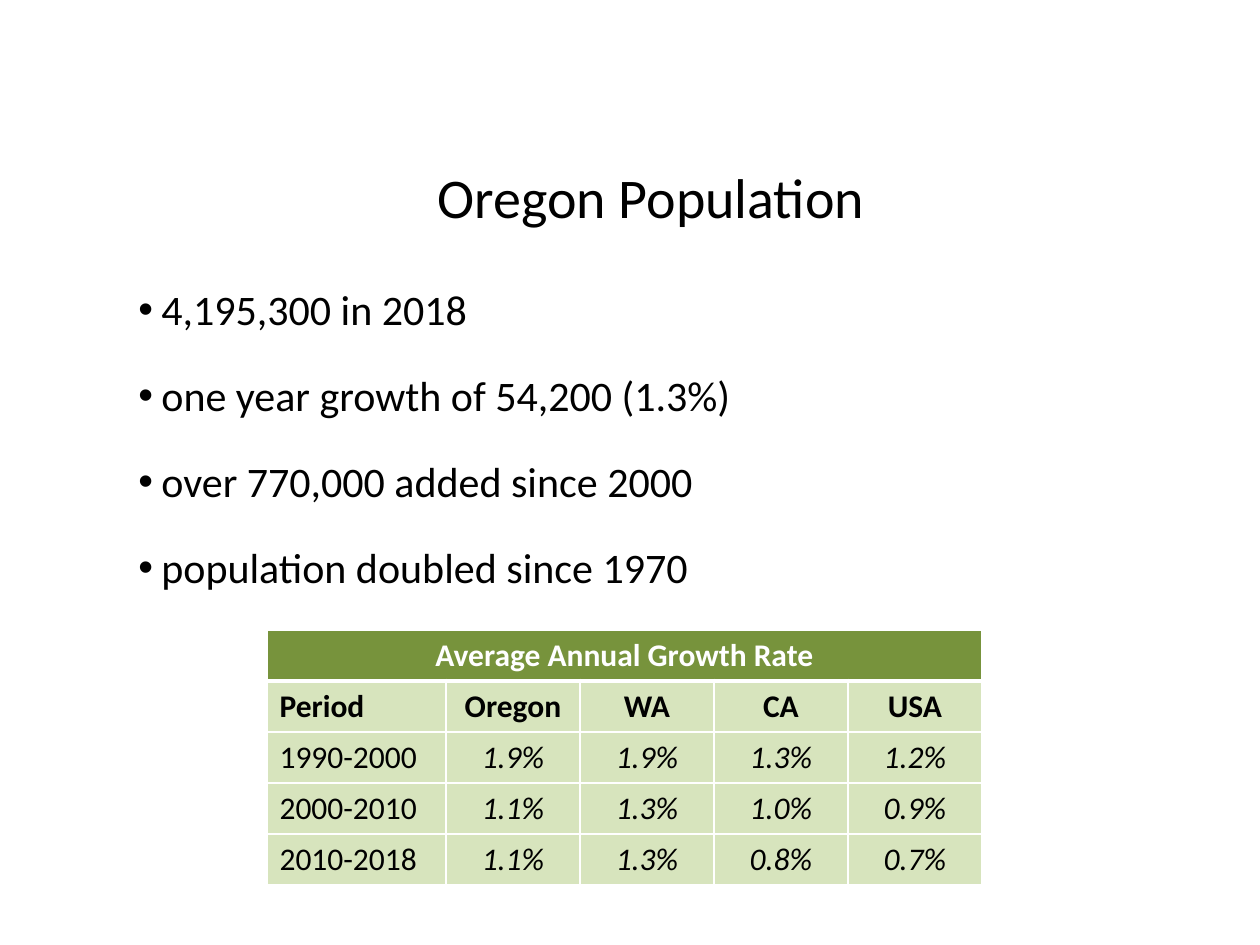
from lxml.etree import SubElement
from pptx import Presentation
from pptx.dml.color import RGBColor
from pptx.enum.text import MSO_ANCHOR, PP_ALIGN
from pptx.oxml.ns import qn
from pptx.util import Pt

TITLE = "Oregon Population"
FACTS = [
    "4,195,300 in 2018",
    "one year growth of 54,200 (1.3%)",
    "over 770,000 added since 2000",
    "population doubled since 1970",
]
TABLE_TITLE = "Average Annual Growth Rate"
HEADINGS = ["Period", "Oregon", "WA", "CA", "USA"]
RATES = [
    ["1990-2000", "1.9%", "1.9%", "1.3%", "1.2%"],
    ["2000-2010", "1.1%", "1.3%", "1.0%", "0.9%"],
    ["2010-2018", "1.1%", "1.3%", "0.8%", "0.7%"],
]

COLORS = {"text": "000000", "white": "FFFFFF", "header": "77933C", "body": "D7E4BD"}
FONT = "Calibri"
EMU_PER_PX = 914400 // 126
TITLE_BOX = (63, 130, 1176, 132)
FACTS_BOX = (126, 252, 998, 350)
TABLE_AT = (267, 630)
COLUMN_WIDTHS = [179] + [134] * 4
ROW_HEIGHT = 51
BULLET_INDENT = 23


def px(length):
    return length * EMU_PER_PX


def place(shape, box):
    for name, length in zip(("left", "top", "width", "height"), box):
        setattr(shape, name, px(length))


def set_font(para, size, color="text", **style):
    values = {"name": FONT, "size": Pt(size), **style}
    for target in (para.font, *(span.font for span in para.runs)):
        for name, value in values.items():
            setattr(target, name, value)
        target.color.rgb = RGBColor.from_string(COLORS[color])


def add_bullet(para):
    properties = para._p.get_or_add_pPr()
    properties.set("marL", str(px(BULLET_INDENT)))
    properties.set("indent", str(-px(BULLET_INDENT)))
    SubElement(properties, qn("a:buFont"), typeface="Arial")
    SubElement(properties, qn("a:buChar"), char="•")


def set_borders(cell, widths):
    """Draw white borders; widths maps an edge (L, R, T, B) to points."""
    properties = cell._tc.get_or_add_tcPr()
    for index, (edge, width) in enumerate(widths.items()):
        line = properties.makeelement(qn(f"a:ln{edge}"), {"w": str(Pt(width))})
        fill = SubElement(line, qn("a:solidFill"))
        SubElement(fill, qn("a:srgbClr"), val=COLORS["white"])
        properties.insert(index, line)


def add_title(page):
    title = page.shapes.title
    place(title, TITLE_BOX)
    title.text_frame.text = TITLE
    title.text_frame.vertical_anchor = MSO_ANCHOR.MIDDLE
    para = title.text_frame.paragraphs[0]
    para.alignment = PP_ALIGN.CENTER
    set_font(para, 32)


def add_facts(page):
    box = page.shapes.add_textbox(*map(px, FACTS_BOX))
    frame = box.text_frame
    frame.word_wrap = True
    for index, fact in enumerate(FACTS):
        para = frame.add_paragraph() if index else frame.paragraphs[0]
        para.add_run().text = fact
        para.line_spacing = 1.5
        para.space_before = Pt(6 if index else 0)
        add_bullet(para)
        set_font(para, 24)


def add_growth_table(page):
    rows = [[TABLE_TITLE] + [""] * (len(HEADINGS) - 1), HEADINGS, *RATES]
    size = (sum(COLUMN_WIDTHS), ROW_HEIGHT * len(rows))
    frame = page.shapes.add_table(len(rows), len(HEADINGS), *map(px, TABLE_AT + size))
    table = frame.table
    for column, width in zip(table.columns, COLUMN_WIDTHS):
        column.width = px(width)
    for row_index, values in enumerate(rows):
        is_title = row_index == 0
        table.rows[row_index].height = px(ROW_HEIGHT)
        for column_index, value in enumerate(values):
            cell = table.cell(row_index, column_index)
            cell.text = value
            cell.fill.solid()
            fill = COLORS["header" if is_title else "body"]
            cell.fill.fore_color.rgb = RGBColor.from_string(fill)
            set_borders(cell, {"L": 1, "R": 1, "T": 3 if row_index == 1 else 1,
                               "B": 3 if is_title else 1})
            para = cell.text_frame.paragraphs[0]
            centered = is_title or column_index > 0
            para.alignment = PP_ALIGN.CENTER if centered else PP_ALIGN.LEFT
            set_font(para, 18, "white" if is_title else "text",
                     bold=row_index < 2, italic=row_index > 1 and column_index > 0)
    table.cell(0, 0).merge(table.cell(0, len(HEADINGS) - 1))


def main():
    deck = Presentation()
    deck.slide_width, deck.slide_height = px(1260), px(945)
    page = deck.slides.add_slide(deck.slide_layouts[5])
    add_title(page)
    add_facts(page)
    add_growth_table(page)
    deck.save("out.pptx")


if __name__ == "__main__":
    main()
